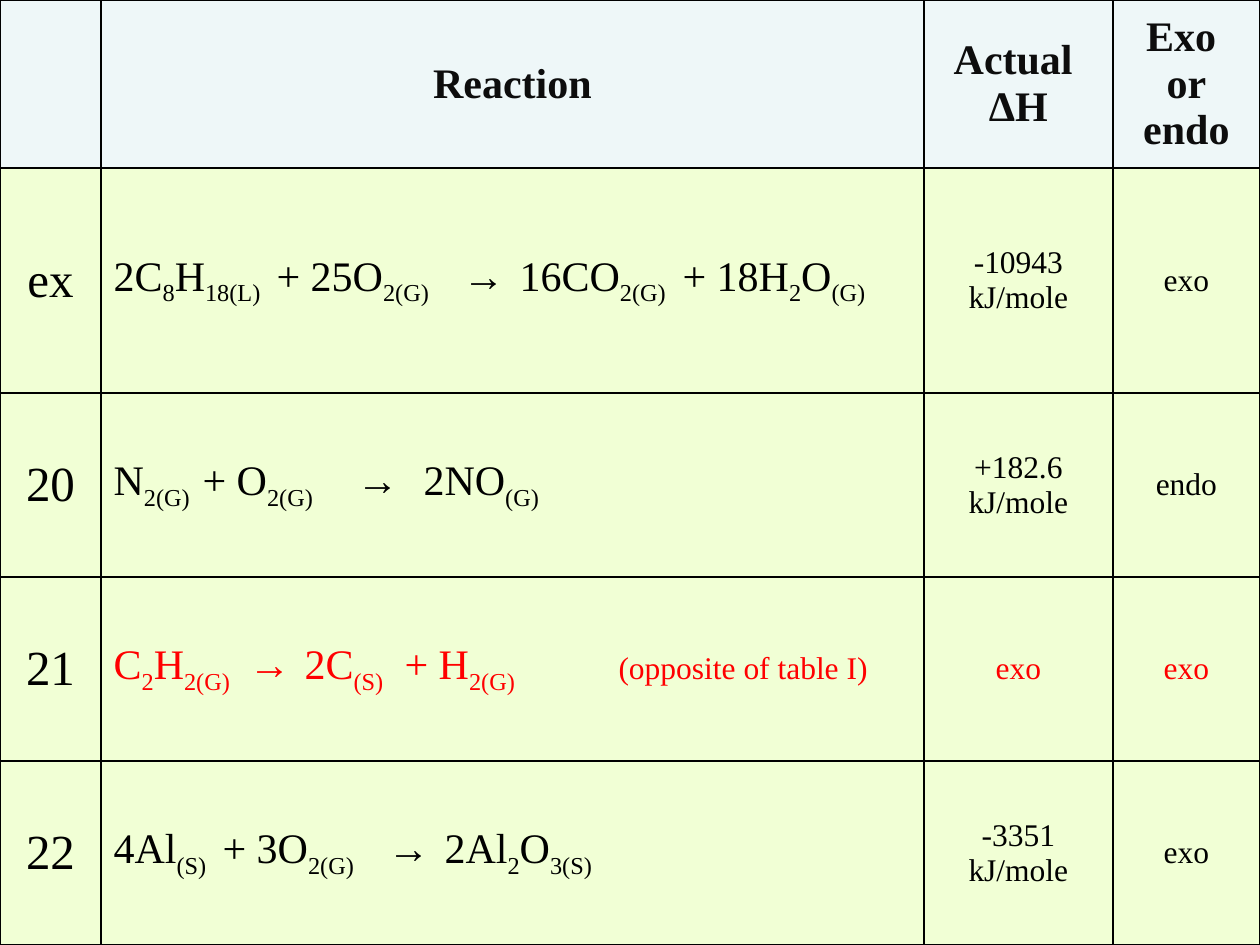
"""Build a slide with a table of reactions and their heats."""
from dataclasses import dataclass

from lxml.etree import SubElement
from pptx import Presentation
from pptx.dml.color import RGBColor
from pptx.enum.text import MSO_ANCHOR, PP_ALIGN
from pptx.oxml import parse_xml
from pptx.oxml.ns import nsdecls, qn
from pptx.util import Pt

PX = 914400 // 126


@dataclass(frozen=True)
class Theme:
    font: str = "Times New Roman"
    header_fill: str = "EEF7F8"
    row_fill: str = "F1FFD5"
    header_ink: str = "0D0D0D"
    ink: str = "000000"
    accent: str = "FF0000"
    border: str = "000000"
    label_size: int = 28
    formula_size: int = 24
    detail_size: int = 18


class ReactionSlide:
    def __init__(self, slide, theme):
        self.slide = slide
        self.theme = theme

    def table(self, widths, heights):
        frame = self.slide.shapes.add_table(
            len(heights), len(widths), 0, 0, sum(widths) * PX, sum(heights) * PX)
        grid = frame.table
        for flag, value in {"first_row": False, "horz_banding": False}.items():
            setattr(grid, flag, value)
        for column, width in zip(grid.columns, widths):
            column.width = width * PX
        for row, height in zip(grid.rows, heights):
            row.height = height * PX
        return grid

    def cell(self, cell, fill):
        cell.vertical_anchor = MSO_ANCHOR.MIDDLE
        cell.fill.solid()
        cell.fill.fore_color.rgb = RGBColor.from_string(fill)
        properties = cell._tc.get_or_add_tcPr()
        for position, side in enumerate(("lnL", "lnR", "lnT", "lnB")):
            properties.insert(position, parse_xml(
                f'<a:{side} {nsdecls("a")} w="{Pt(1)}"><a:solidFill>'
                f'<a:srgbClr val="{self.theme.border}"/></a:solidFill></a:{side}>'))

    def style(self, run, size, ink, bold=False):
        values = {"name": self.theme.font, "size": Pt(size), "bold": bold}
        for attribute, value in values.items():
            setattr(run.font, attribute, value)
        run.font.color.rgb = RGBColor.from_string(ink)

    def centred(self, cell, wording, size, ink, bold=False):
        paragraph = cell.text_frame.paragraphs[0]
        paragraph.text = wording
        paragraph.alignment = PP_ALIGN.CENTER
        for run in paragraph.runs:
            self.style(run, size, ink, bold)

    def reaction(self, cell, formula, stops, ink, remark):
        """Write a formula whose every second part, split at bars, is a subscript."""
        paragraph = cell.text_frame.paragraphs[0]
        tab_list = SubElement(paragraph._p.get_or_add_pPr(), qn("a:tabLst"))
        for stop in stops:
            SubElement(tab_list, qn("a:tab"), pos=str(stop * PX), algn="l")
        for index, part in enumerate(formula.split("|")):
            run = paragraph.add_run()
            run.text = part
            self.style(run, self.theme.formula_size, ink)
            if index % 2:
                run._r.get_or_add_rPr().set("baseline", "-25000")
        if remark:
            run = paragraph.add_run()
            run.text = "\t" + remark
            self.style(run, self.theme.detail_size, ink)


THEME = Theme()
COLUMN_WIDTHS = [101, 823, 189, 147]
ROW_HEIGHTS = [168, 225, 184, 184, 184]
HEADINGS = ["", "Reaction", "Actual \vΔH", "Exo \vor\vendo"]
REACTIONS = [
    ("ex", "2C|8|H|18(L)|\t+ 25O|2(G)|\t→\t16CO|2(G)|\t+ 18H|2|O|(G)",
     [163, 349, 406, 569], "", "-10943 kJ/mole", "exo", THEME.ink),
    ("20", "N|2(G)|\t+ O|2(G)|\t→\t2NO|(G)",
     [89, 243, 310], "", "+182.6\vkJ/mole", "endo", THEME.ink),
    ("21", "C|2|H|2(G)|\t→\t2C|(S)|\t+ H|2(G)",
     [135, 191, 291, 505], "(opposite of table I)", "exo", "exo", THEME.accent),
    ("22", "4Al|(S)|\t+ 3O|2(G)|\t→\t2Al|2|O|3(S)",
     [109, 274, 331], "", "-3351\vkJ/mole", "exo", THEME.ink),
]


def main():
    deck = Presentation()
    deck.slide_width = sum(COLUMN_WIDTHS) * PX
    deck.slide_height = sum(ROW_HEIGHTS) * PX
    page = ReactionSlide(deck.slides.add_slide(deck.slide_layouts[6]), THEME)
    grid = page.table(COLUMN_WIDTHS, ROW_HEIGHTS)
    for row_number, row in enumerate(grid.rows):
        for cell in row.cells:
            page.cell(cell, THEME.row_fill if row_number else THEME.header_fill)
    for column, heading in enumerate(HEADINGS):
        if heading:
            page.centred(grid.cell(0, column), heading,
                         THEME.formula_size, THEME.header_ink, bold=True)
    for row_number, reaction in enumerate(REACTIONS, start=1):
        label, formula, stops, remark, heat, kind, ink = reaction
        page.centred(grid.cell(row_number, 0), label, THEME.label_size, THEME.ink)
        page.reaction(grid.cell(row_number, 1), formula, stops, ink, remark)
        for column, detail in enumerate((heat, kind), start=2):
            page.centred(grid.cell(row_number, column), detail, THEME.detail_size, ink)
    deck.save("out.pptx")


if __name__ == "__main__":
    main()
